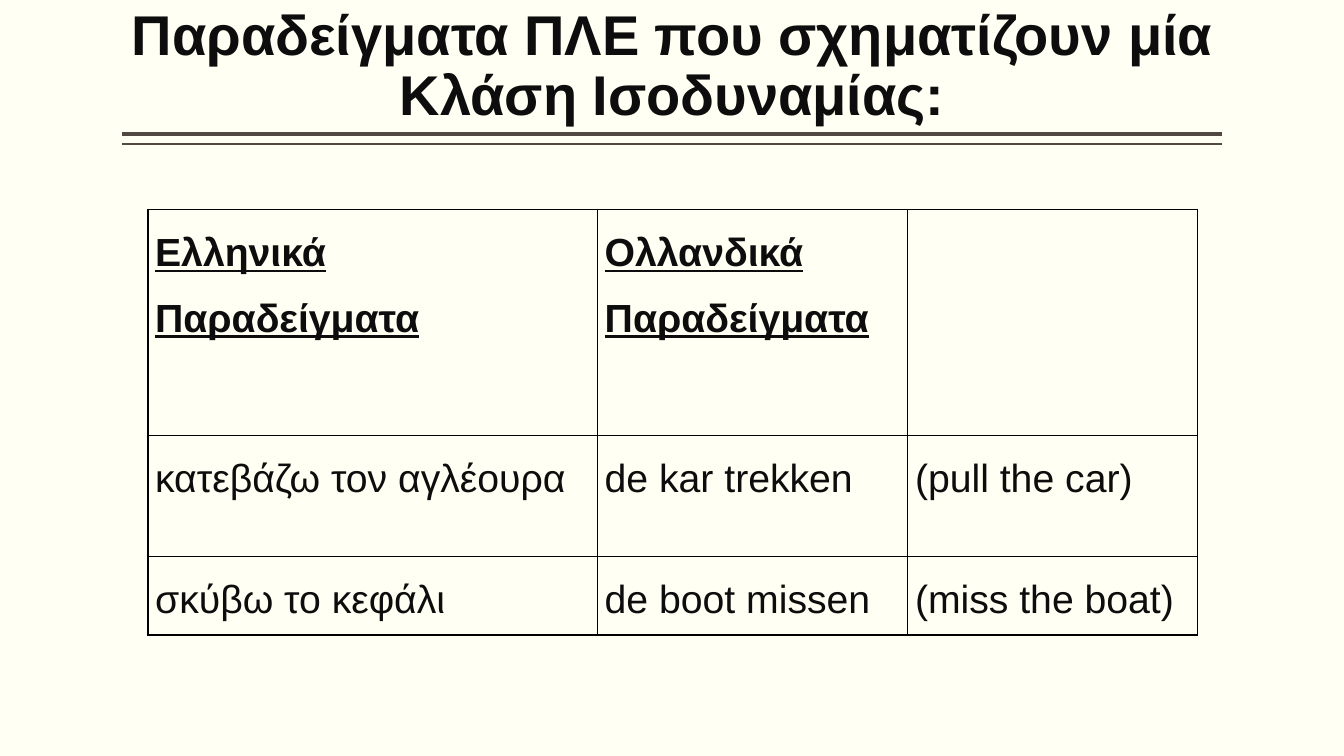
import pptx
import pptx.util
import pptx.dml.color
import pptx.enum.shapes
import pptx.enum.text
import pptx.oxml.ns
import lxml.etree

Cm, Pt = pptx.util.Cm, pptx.util.Pt
ALIGN = pptx.enum.text.PP_ALIGN
COLORS = {"paper": "FFFFF3", "ink": "0D0D0D", "rule": "514843", "grid": "000000"}


def color(name):
    return pptx.dml.color.RGBColor.from_string(COLORS[name])


def add_xml(parent, tag, **attrs):
    return lxml.etree.SubElement(parent, pptx.oxml.ns.qn(tag), attrs)


class Deck:
    font = "Arial"

    def __init__(self, width, height):
        self.file = pptx.Presentation()
        self.file.slide_width, self.file.slide_height = Cm(width), Cm(height)
        self.slide = self.file.slides.add_slide(self.file.slide_layouts[6])
        fill = self.slide.background.fill
        fill.solid()
        fill.fore_color.rgb = color("paper")

    def text(self, frame, words, spacing, align, **style):
        par = frame.paragraphs[0]
        par.line_spacing, par.alignment = spacing, align
        run = par.add_run()
        run.text = words
        for key, value in {"name": self.font, **style}.items():
            setattr(run.font, key, value)
        run.font.color.rgb = color("ink")

    def title(self, words, left, top, width, height):
        box = self.slide.shapes.add_textbox(Cm(left), Cm(top), Cm(width), Cm(height))
        frame = box.text_frame
        layout = {"word_wrap": True, "margin_left": 0, "margin_right": 0,
                  "vertical_anchor": pptx.enum.text.MSO_ANCHOR.BOTTOM}
        for key, value in layout.items():
            setattr(frame, key, value)
        self.text(frame, words, 0.9, ALIGN.CENTER, size=Pt(40), bold=True)

    def rule(self, left, right, y, weight):
        line = self.slide.shapes.add_connector(
            pptx.enum.shapes.MSO_CONNECTOR.STRAIGHT, Cm(right), Cm(y), Cm(left), Cm(y))
        line.line.color.rgb = color("rule")
        line.line.width = Pt(weight)
        add_xml(line._element.spPr, "a:effectLst")

    def border(self, cell, hidden):
        props = cell._tc.get_or_add_tcPr()
        for side in "LRTB":
            edge = add_xml(props, f"a:ln{side}", w=str(Pt(1)))
            if side == hidden:
                add_xml(edge, "a:noFill")
            else:
                fill = add_xml(edge, "a:solidFill")
                add_xml(fill, "a:srgbClr", val=COLORS["grid"])

    def table(self, left, top, widths, heights, rows):
        grid = self.slide.shapes.add_table(
            len(rows), len(widths), Cm(left), Cm(top),
            Cm(sum(widths)), Cm(sum(heights))).table
        grid.first_row = grid.horz_banding = False
        for col, width in zip(grid.columns, widths):
            col.width = Cm(width)
        for row, height in zip(grid.rows, heights):
            row.height = Cm(height)
        pads = {"margin_left": Cm(0.18), "margin_right": Cm(0.18),
                "margin_top": 0, "margin_bottom": 0}
        # The heading row and the empty row below it read as one block
        open_sides = {0: "B", 1: "T"}
        for i, texts in enumerate(rows):
            for j, words in enumerate(texts):
                cell = grid.cell(i, j)
                for key, value in pads.items():
                    setattr(cell, key, value)
                self.border(cell, open_sides.get(i))
                cell.fill.background()
                if words:
                    self.text(cell.text_frame, words, 1.5, ALIGN.LEFT,
                              size=Pt(28), bold=i == 0, underline=i == 0)


def main():
    deck = Deck(33.87, 19.05)

    # Double rule under the title
    for y, weight in ((3.38, 3), (3.63, 1)):
        deck.rule(3.07, 30.8, y, weight)

    # Title
    deck.title("Παραδείγματα ΠΛΕ που σχηματίζουν μία Κλάση Ισοδυναμίας:",
               3.07, 0.43, 27.74, 2.92)

    # Table of examples
    deck.table(3.73, 5.28, (11.33, 7.82, 7.29), (3.71, 1.98, 3.05, 1.98), (
        ("Ελληνικά Παραδείγματα", "Ολλανδικά Παραδείγματα", ""),
        ("", "", ""),
        ("κατεβάζω τον αγλέουρα", "de kar trekken", "(pull the car)"),
        ("σκύβω το κεφάλι", "de boot missen", "(miss the boat)"),
    ))

    deck.file.save("out.pptx")


if __name__ == "__main__":
    main()
